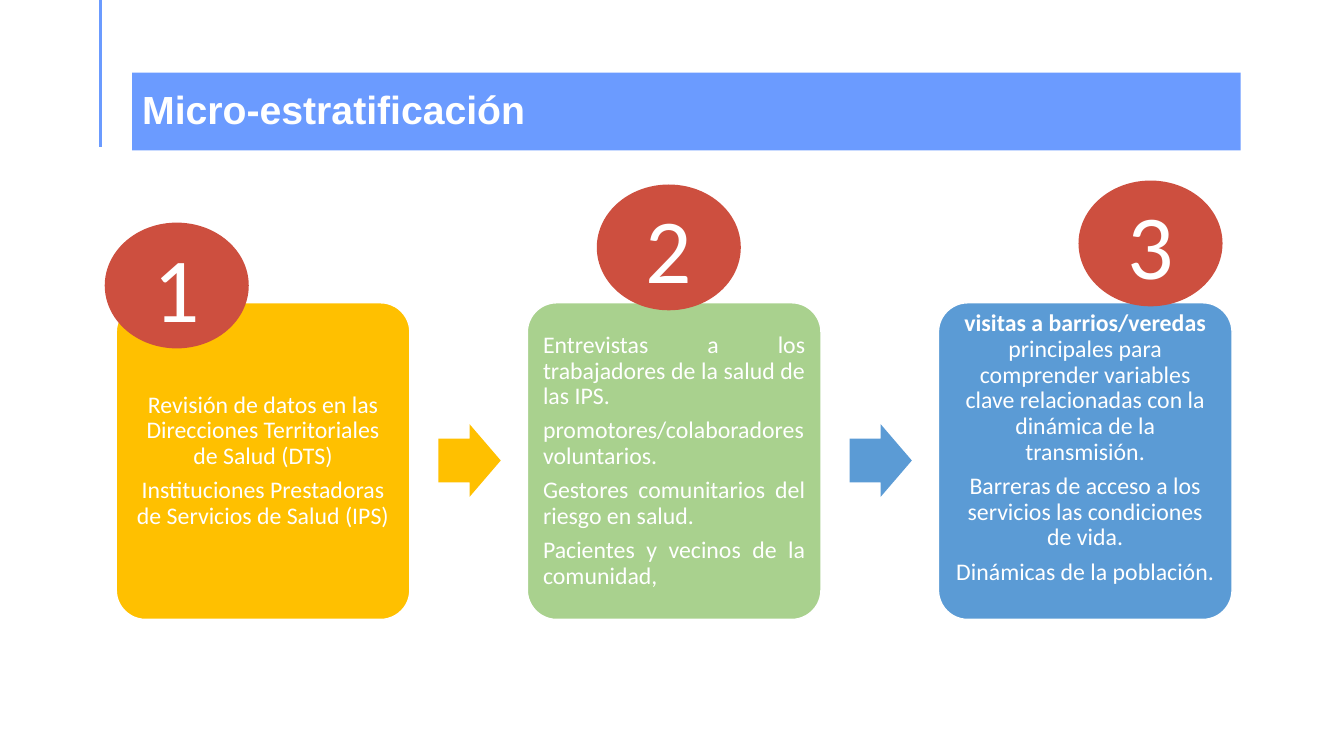
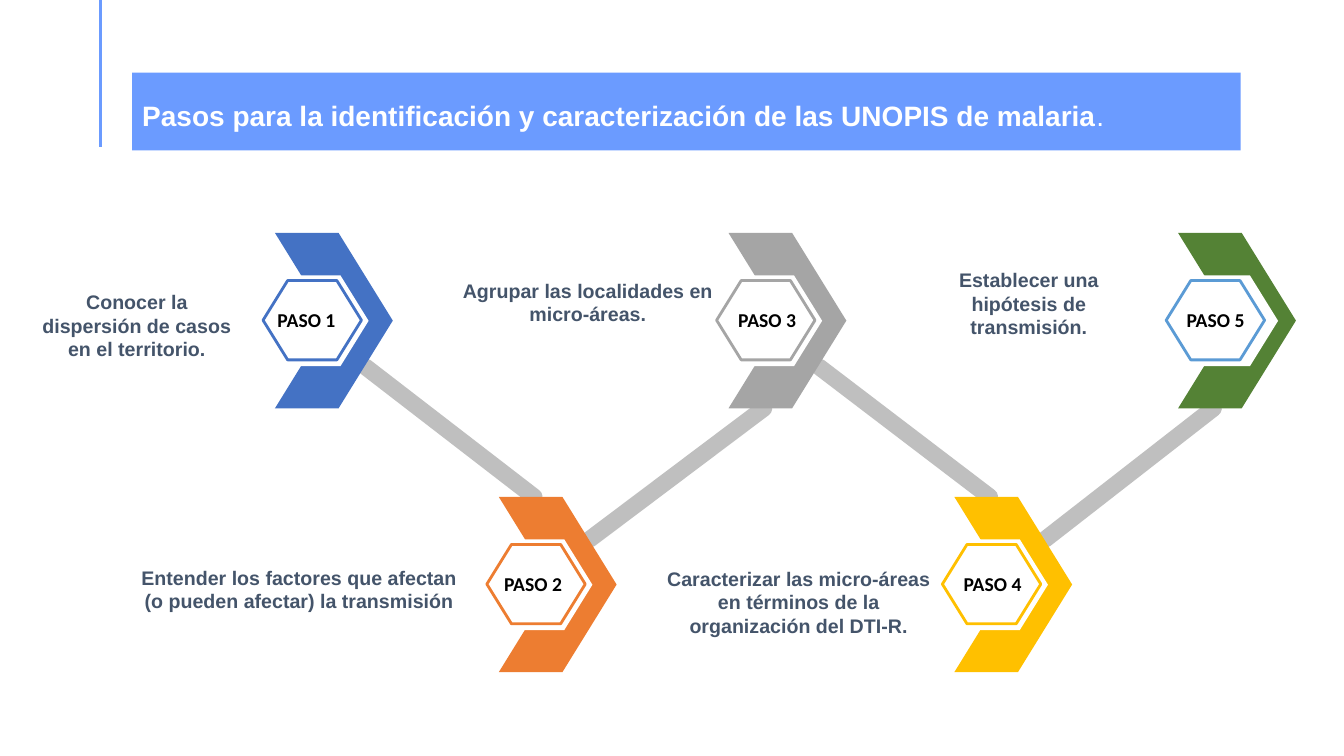
"""Build two slides on malaria micro-stratification."""
from lxml import etree
from pptx import Presentation
from pptx import util as u
from pptx.dml.color import RGBColor
from pptx.enum import shapes, text
from pptx.oxml.ns import qn

COLORS = {
    "band": "6B9BFF", "white": "FFFFFF", "black": "000000", "slate": "44546A",
    "red": "CD4F3F", "gold": "FFC000", "mint": "A9D18E", "sky": "5B9BD5",
    "blue": "4472C4", "orange": "ED7D31", "gray": "A5A5A5", "green": "548235",
    "link": "BFBFBF",
}
KIND = shapes.MSO_SHAPE
ALIGN = text.PP_ALIGN
ANCHOR = text.MSO_ANCHOR

CARDS = [
    {"color": "gold", "align": ALIGN.CENTER, "bottom": 0.18, "badge": (2.64, 5.61), "paragraphs": [
        [("Revisión de datos en las Direcciones Territoriales de Salud (DTS)", False)],
        [("Instituciones Prestadoras de Servicios de Salud (IPS)", False)]]},
    {"color": "mint", "align": ALIGN.JUSTIFY, "bottom": 0.18, "badge": (15.04, 4.65), "paragraphs": [
        [("Entrevistas a los trabajadores de la salud de las IPS.", False)],
        [("promotores/colaboradores voluntarios.", False)],
        [("Gestores comunitarios del riesgo en salud.", False)],
        [("Pacientes y vecinos de la comunidad,", False)]]},
    {"color": "sky", "align": ALIGN.CENTER, "bottom": 0.83, "badge": (27.18, 4.55), "paragraphs": [
        [("visitas a barrios/veredas ", True),
         ("principales para comprender variables clave relacionadas con la "
          "dinámica de la transmisión.", False)],
        [("Barreras de acceso a los servicios las condiciones de vida.", False)],
        [("Dinámicas de la población.", False)]]},
]
CARD_LEFT, CARD_TOP, CARD_WIDTH, CARD_HEIGHT, CARD_PITCH = 2.93, 7.63, 7.4, 7.98, 10.36

UPPER, LOWER = 5.87, 12.52
STEPS = [
    {"left": 6.93, "top": UPPER, "color": "blue", "ring": "blue", "gap": 0.46, "label": 6.81,
     "caption": "Conocer la dispersión de casos en el territorio.",
     "box": (0.76, 7.16, 5.38, 2.06)},
    {"left": 12.57, "top": LOWER, "color": "orange", "ring": "orange", "gap": 0.46, "label": 12.52,
     "caption": "Entender los factores que afectan (o pueden afectar) la transmisión",
     "box": (3.3, 14.12, 8.48, 1.45)},
    {"left": 18.36, "top": UPPER, "color": "gray", "ring": "gray", "gap": 0.46, "label": 18.42,
     "caption": "Agrupar las localidades en micro-áreas.",
     "box": (11.35, 6.88, 6.93, 1.45)},
    {"left": 24.05, "top": LOWER, "color": "gold", "ring": "gold", "gap": 0.46, "label": 24.1,
     "caption": "Caracterizar las micro-áreas en términos de la organización del DTI-R.",
     "box": (16.46, 14.12, 7.34, 2.06)},
    {"left": 29.69, "top": UPPER, "color": "green", "ring": "sky", "gap": 0.3, "label": 29.72,
     "caption": "Establecer una hipótesis de transmisión.",
     "box": (22.83, 6.6, 6.2, 2.06)},
]
CHEVRON_WIDTH, CHEVRON_HEIGHT = 2.97, 4.42


def rgb(name):
    """Return the named colour."""
    return RGBColor.from_string(COLORS[name])


def write(box, paragraphs, size, font, color, align=ALIGN.CENTER, anchor=ANCHOR.MIDDLE,
          wrap=True, inset=None, spacing=None, after=0):
    """Fill a box with paragraphs made of (text, bold) runs."""
    frame = box.text_frame
    frame.word_wrap = wrap
    frame.auto_size = text.MSO_AUTO_SIZE.NONE
    frame.vertical_anchor = anchor
    if inset is not None:
        frame.margin_left = frame.margin_right = u.Cm(inset)
        frame.margin_top = frame.margin_bottom = u.Cm(inset)
    for index, runs in enumerate(paragraphs):
        para = frame.paragraphs[0] if index == 0 else frame.add_paragraph()
        para.alignment = align
        para.space_after = u.Pt(after)
        if spacing:
            para.line_spacing = spacing
        for content, bold in runs:
            span = para.add_run()
            span.text = content
            span.font.size = u.Pt(size)
            span.font.name = font
            span.font.bold = bold
            span.font.color.rgb = rgb(color)


def add_shape(page, kind, area, fill, line=None, width=1, adjust=()):
    """Add a flat preset shape; area is left, top, width, height in cm."""
    shape = page.shapes.add_shape(kind, *map(u.Cm, area))
    shape.shadow.inherit = False
    shape.fill.solid()
    shape.fill.fore_color.rgb = rgb(fill)
    if line:
        shape.line.color.rgb = rgb(line)
        shape.line.width = u.Pt(width)
    else:
        shape.line.fill.background()
    for index, value in enumerate(adjust):
        shape.adjustments[index] = value
    return shape


def add_line(page, start, end, color, width, cap="flat"):
    """Add a straight line between two points in cm."""
    line = page.shapes.add_connector(shapes.MSO_CONNECTOR.STRAIGHT, *map(u.Cm, start + end))
    line.line.color.rgb = rgb(color)
    line.line.width = u.Pt(width)
    line.line._ln.set("cap", cap)
    etree.SubElement(line._element.spPr, qn("a:effectLst"))


def add_page(deck, title, size, top=1.83, anchor=ANCHOR.MIDDLE):
    """Add a slide with the title band and the side rule."""
    page = deck.slides.add_slide(deck.slide_layouts[5])
    band = add_shape(page, KIND.RECTANGLE, (3.33, 1.83, 27.94, 1.96), "band")
    page.shapes._spTree.insert(2, band._element)
    add_line(page, (2.54, -0.23), (2.54, 3.71), "band", 2.25)
    heading = page.shapes.title
    heading.left, heading.top, heading.width, heading.height = map(u.Cm, (3.33, top, 27.69, 1.96))
    write(heading, [title], size, "Arial", "white", ALIGN.LEFT, anchor, spacing=0.9)
    return page


def build_cards(deck):
    """Draw the three numbered cards."""
    page = add_page(deck, [("Micro-estratificación", True)], 28)
    for index, card in enumerate(CARDS):
        left = CARD_LEFT + index * CARD_PITCH
        box = add_shape(page, KIND.ROUNDED_RECTANGLE, (left, CARD_TOP, CARD_WIDTH, CARD_HEIGHT),
                        card["color"], "white", adjust=(0.1,))
        write(box, card["paragraphs"], 17, "Calibri", "white", card["align"],
              inset=0.18, spacing=0.9, after=6)
        box.text_frame.margin_bottom = u.Cm(card["bottom"])
        if index:
            add_shape(page, KIND.RIGHT_ARROW, (left - 2.24, 10.69, 1.57, 1.83),
                      "gold" if index == 1 else card["color"], adjust=(0.6, 0.5))
    for number, card in enumerate(CARDS, 1):
        badge = add_shape(page, KIND.OVAL, card["badge"] + (3.63, 3.17), "red")
        write(badge, [[(str(number), False)]], 65.3, "Calibri", "white", wrap=False)


def build_steps(deck):
    """Draw the zigzag of five steps."""
    title = [("Pasos para la identificación y caracterización de las UNOPIS de malaria", True),
             (".", False)]
    page = add_page(deck, title, 20, 2.46, ANCHOR.TOP)
    for step, following in zip(STEPS, STEPS[1:]):
        down = step["top"] == UPPER
        start = (step["left"] + 2.29, step["top"] + (3.38 if down else 1.07))
        end = (following["left"] + 0.89, following["top"] + (0 if down else CHEVRON_HEIGHT))
        add_line(page, start, end, "link", 12, "rnd")
    for number, step in enumerate(STEPS, 1):
        left, top = step["left"], step["top"]
        add_shape(page, KIND.CHEVRON, (left, top, CHEVRON_WIDTH, CHEVRON_HEIGHT),
                  step["color"], adjust=(0.46,))
        add_shape(page, KIND.HEXAGON, (left - step["gap"], top + 1.07, 2.82, 2.29),
                  "white", adjust=(0.31,))
        add_shape(page, KIND.HEXAGON, (left - 0.3, top + 1.2, 2.48, 2),
                  "white", step["ring"], 2, (0.31,))
        label = page.shapes.add_textbox(*map(u.Cm, (step["label"], top + 1.75, 1.83, 0.89)))
        write(label, [[(f"PASO {number}", True)]], 14, "Calibri", "black", wrap=False, inset=0.13)
        caption = page.shapes.add_textbox(*map(u.Cm, step["box"]))
        write(caption, [[(step["caption"], True)]], 14, "Arial", "slate", anchor=ANCHOR.BOTTOM)


def main():
    """Build and save the deck."""
    deck = Presentation()
    deck.slide_width, deck.slide_height = u.Cm(33.87), u.Cm(19.05)
    build_cards(deck)
    build_steps(deck)
    deck.save("out.pptx")


if __name__ == "__main__":
    main()
